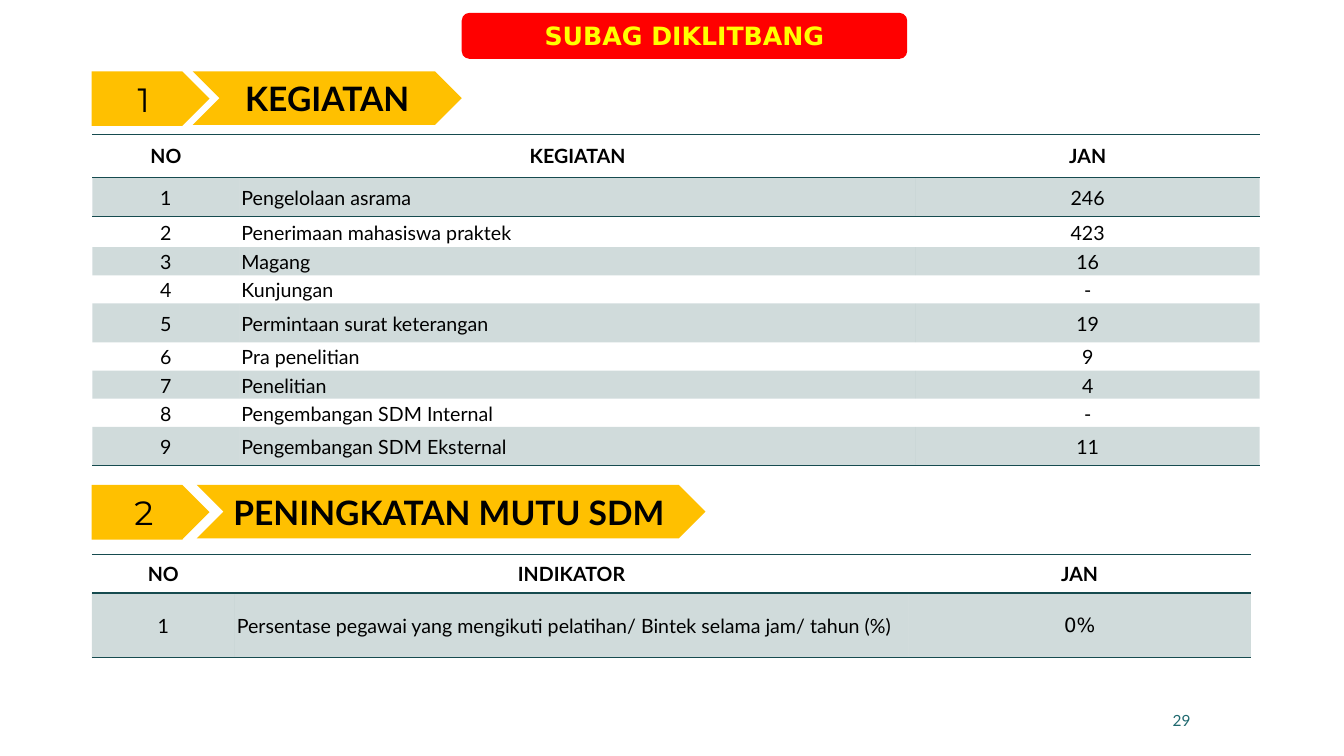
from lxml.etree import SubElement
from pptx import Presentation
from pptx.dml.color import RGBColor
from pptx.enum.shapes import MSO_SHAPE as SHAPE
from pptx.enum.text import MSO_ANCHOR as ANCHOR, PP_ALIGN as ALIGN
from pptx.oxml import parse_xml
from pptx.oxml.ns import nsdecls, qn
from pptx.util import Pt

COLORS = {"red": "FF0000", "yellow": "FFFF00", "gold": "FFC000",
          "teal": "164B4F", "number": "1F696F", "black": "000000"}
NO_STYLE = "{2D5ABB26-0587-4C30-8999-92F81FD0307C}"
ACTIVITIES = [
    ("NO", "KEGIATAN", "JAN"),
    ("1", "Pengelolaan asrama", "246"),
    ("2", "Penerimaan mahasiswa praktek", "423"),
    ("3", "Magang", "16"),
    ("4", "Kunjungan", "-"),
    ("5", "Permintaan surat keterangan", "19"),
    ("6", "Pra penelitian", "9"),
    ("7", "Penelitian", "4"),
    ("8", "Pengembangan SDM Internal", "-"),
    ("9", "Pengembangan SDM Eksternal", "11"),
]
INDICATORS = [
    ("NO", "INDIKATOR", "JAN"),
    ("1", "Persentase pegawai yang mengikuti pelatihan/ Bintek selama jam/ tahun (%)", "0%"),
]


def rgb(name):
    """Return the named colour."""
    return RGBColor.from_string(COLORS[name])


def write(tf, text, size, color="black", font="Lato", bold=False, align=ALIGN.CENTER):
    """Write one formatted run into a text frame."""
    p = tf.paragraphs[0]
    p.alignment = align
    r = p.add_run()
    r.text = text
    r.font.size, r.font.name, r.font.bold = Pt(size), font, bold
    r.font.color.rgb = rgb(color)


def add_label(s, kind, box, fill, text, size, **style):
    """Add a filled shape with its text."""
    sp = s.shapes.add_shape(kind, *map(Pt, box))
    sp.shadow.inherit = False
    sp.fill.solid()
    sp.fill.fore_color.rgb = rgb(fill)
    sp.line.fill.background()
    sp.text_frame.vertical_anchor = ANCHOR.MIDDLE
    write(sp.text_frame, text, size, **style)


def add_heading(s, top, number, title, left, width, align=ALIGN.CENTER):
    """Add a numbered arrow followed by its title chevron."""
    add_label(s, SHAPE.PENTAGON, (65.5, top, 84.2, 39), "gold", number, 24, font="Montserrat")
    add_label(s, SHAPE.CHEVRON, (left, top, width, 38.2), "gold", title, 24,
              bold=True, align=align)


def add_border(cell, sides):
    """Draw teal lines on the given sides, a dict of tag to width in points."""
    tcPr = cell._tc.get_or_add_tcPr()
    for i, (tag, width) in enumerate(sides.items()):
        tcPr.insert(i, parse_xml(
            f'<a:{tag} {nsdecls("a")} w="{Pt(width)}"><a:solidFill>'
            f'<a:srgbClr val="{COLORS["teal"]}"/></a:solidFill></a:{tag}>'))


def shade(cell):
    """Fill a cell with light transparent teal."""
    cell.fill.solid()
    cell.fill.fore_color.rgb = rgb("teal")
    clr = cell._tc.tcPr.find(".//" + qn("a:srgbClr"))
    SubElement(clr, qn("a:alpha"), val="20000")


def add_ruled_table(s, left, top, widths, heights, rows, header_line=1,
                    text_align=ALIGN.LEFT, value_font="Lato"):
    """Add a table with ruled header, shaded odd rows and a closing line."""
    frame = s.shapes.add_table(len(rows), len(widths), Pt(left), Pt(top),
                               Pt(sum(widths)), Pt(sum(heights)))
    table = frame.table
    frame.element.find(".//" + qn("a:tableStyleId")).text = NO_STYLE
    for column, width in zip(table.columns, widths):
        column.width = Pt(width)
    for i, (values, height) in enumerate(zip(rows, heights)):
        table.rows[i].height = Pt(height)
        header = i == 0
        margins = (14.4, 5, 14.4, 5) if header else (1.4, 1.4, 1.4, 0)
        for j, text in enumerate(values):
            cell = table.cell(i, j)
            cell.vertical_anchor = ANCHOR.MIDDLE
            (cell.margin_left, cell.margin_top,
             cell.margin_right, cell.margin_bottom) = map(Pt, margins)
            align = text_align if j == 1 and not header else ALIGN.CENTER
            font = value_font if j == 2 and not header else "Lato"
            write(cell.text_frame, text, 14, font=font, bold=header, align=align)
            if i % 2:
                shade(cell)
            else:
                cell.fill.background()
            if header:
                add_border(cell, {"lnT": 1, "lnB": header_line})
            elif i == 1:
                add_border(cell, {"lnT": header_line})
            if i == len(rows) - 1:
                add_border(cell, {"lnB": 1} if i > 1 else {"lnT": header_line, "lnB": 1}) \
                    if i > 1 else add_border_bottom(cell)


def add_border_bottom(cell):
    """Close a cell that already has a top line."""
    tcPr = cell._tc.get_or_add_tcPr()
    top = tcPr.find(qn("a:lnT"))
    tcPr.remove(top)
    add_border(cell, {"lnB": 1})
    tcPr.insert(0, top)


def add_page_number(s, text):
    """Add the slide number at the lower right."""
    tf = s.shapes.add_textbox(Pt(633.6), Pt(500.4), Pt(223.9), Pt(28.8)).text_frame
    tf.word_wrap = True
    tf.vertical_anchor = ANCHOR.MIDDLE
    write(tf, text, 11, color="number", align=ALIGN.RIGHT)


def main():
    """Build and save the slide."""
    prs = Presentation()
    prs.slide_width, prs.slide_height = Pt(960), Pt(540)
    s = prs.slides.add_slide(prs.slide_layouts[6])
    add_label(s, SHAPE.ROUNDED_RECTANGLE, (329.8, 9.2, 318.2, 32.8), "red",
              "SUBAG DIKLITBANG", 18, color="yellow", font="DejaVu Sans", bold=True)
    add_heading(s, 51, "1", "KEGIATAN", 137.7, 192.2)
    add_ruled_table(s, 66, 96, (105.1, 483.1, 245.6),
                    (31, 27.8, 21.8, 20.1, 20.1, 27.8, 20.1, 20.1, 20.1, 27.8), ACTIVITIES)
    add_heading(s, 346.4, "2", "PENINGKATAN MUTU SDM", 140.5, 363.4, ALIGN.LEFT)
    add_ruled_table(s, 65.6, 396, (102.2, 481, 244.8), (27.6, 46), INDICATORS,
                    header_line=1.5, text_align=ALIGN.JUSTIFY, value_font="DejaVu Sans")
    add_page_number(s, "29")
    prs.save("out.pptx")


if __name__ == "__main__":
    main()
